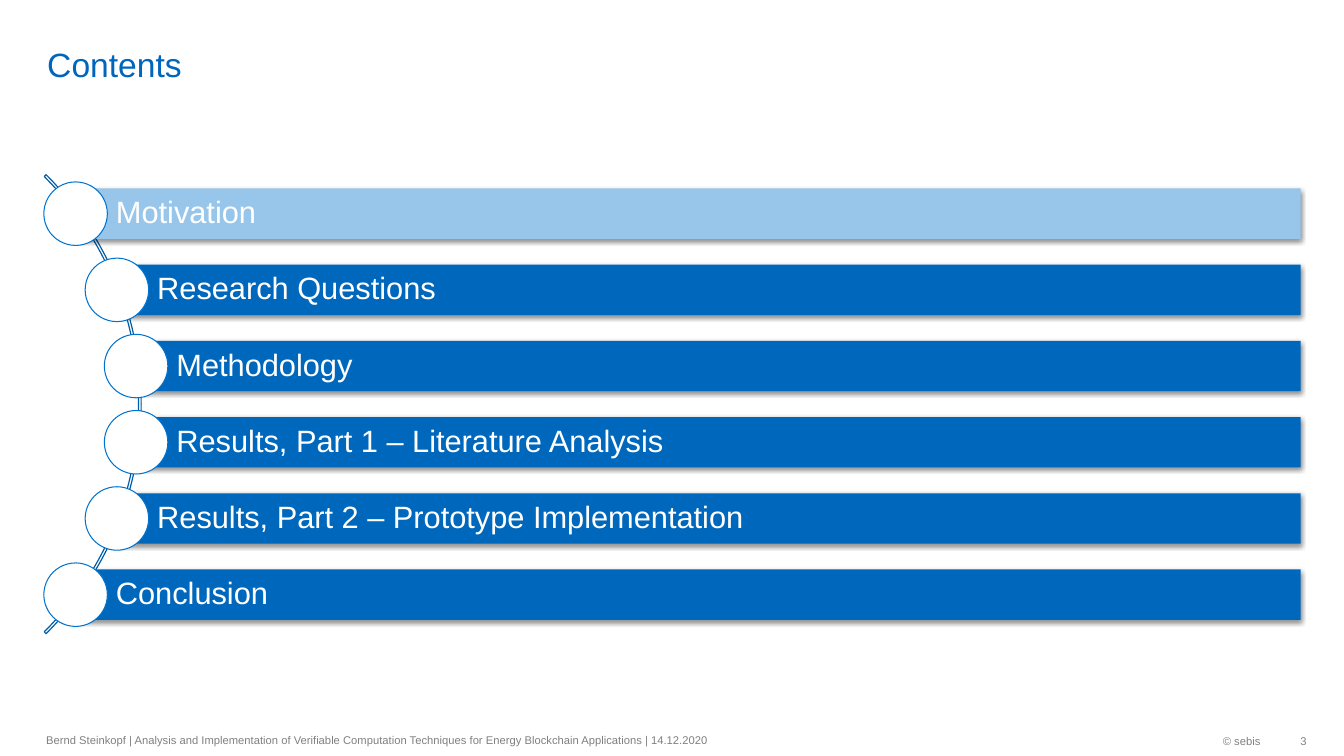
from dataclasses import dataclass

from lxml.etree import SubElement
from pptx import Presentation
from pptx.dml.color import RGBColor
from pptx.enum.shapes import MSO_SHAPE
from pptx.enum.text import MSO_ANCHOR, PP_ALIGN
from pptx.oxml.ns import qn
from pptx.shapes.autoshape import Shape
from pptx.slide import Slide
from pptx.util import Inches, Pt

COLORS = {
    "title": "0065BD",
    "bar": "0068BC",
    "current": "98C6EA",
    "arc": "005CA6",
    "ring": "0073CF",
    "white": "FFFFFF",
    "footer": "808080",
    "shadow": "000000",
}
FONT = "Arial"
BAR_RIGHT, BAR_HEIGHT = 12.9, 0.5
FIRST_TOP, LAST_TOP = 1.87, 5.65
CIRCLE = 0.63


@dataclass
class Chapter:
    name: str
    left: float
    color: str = "bar"


@dataclass
class Label:
    text: str
    left: float
    top: float
    width: float
    height: float
    size: float = 8
    color: str = "footer"
    anchor: MSO_ANCHOR = MSO_ANCHOR.MIDDLE
    align: PP_ALIGN = PP_ALIGN.LEFT
    margins: tuple[float, float, float, float] = (0.1, 0.05, 0.1, 0.05)


CHAPTERS = [
    Chapter("Motivation", 0.75, "current"),
    Chapter("Research Questions", 1.16),
    Chapter("Methodology", 1.35),
    Chapter("Results, Part 1 – Literature Analysis", 1.35),
    Chapter("Results, Part 2 – Prototype Implementation", 1.16),
    Chapter("Conclusion", 0.75),
]

LABELS = [
    Label("Contents", 0.37, 0.05, 11.58, 0.79, 24, "title", MSO_ANCHOR.BOTTOM,
          margins=(0.1, 0, 0.1, 0)),
    Label("Bernd Steinkopf | Analysis and Implementation of Verifiable Computation "
          "Techniques for Energy Blockchain Applications | 14.12.2020",
          0.36, 7.18, 6.97, 0.32),
    Label("© sebis", 10.26, 7.19, 2.34, 0.32, align=PP_ALIGN.RIGHT),
    Label("3", 12.6, 7.19, 0.36, 0.32, align=PP_ALIGN.RIGHT,
          margins=(0.1, 0.05, 0, 0.05)),
]


def color(name: str) -> RGBColor:
    return RGBColor.from_string(COLORS[name])


def write(box: Shape, text: str, size: float, color_name: str, anchor: MSO_ANCHOR,
          align: PP_ALIGN, margins: tuple[float, float, float, float]) -> None:
    frame = box.text_frame
    frame.text = text
    frame.word_wrap = True
    frame.vertical_anchor = anchor
    (frame.margin_left, frame.margin_top,
     frame.margin_right, frame.margin_bottom) = map(Inches, margins)
    para = frame.paragraphs[0]
    para.alignment = align
    span = para.runs[0]
    span.font.name = FONT
    span.font.size = Pt(size)
    span.font.color.rgb = color(color_name)


def add_shadow(shape: Shape) -> None:
    effects = shape.element.spPr.find(qn("a:effectLst"))
    shadow = SubElement(effects, qn("a:outerShdw"), blurRad=str(Pt(3.5)),
                        dist=str(Pt(1.1)), dir="5400000", rotWithShape="0")
    tint = SubElement(shadow, qn("a:srgbClr"), val=COLORS["shadow"])
    SubElement(tint, qn("a:alpha"), val="45000")


def draw_arc(page: Slide) -> None:
    arc = page.shapes.add_shape(MSO_SHAPE.BLOCK_ARC, Inches(-5.04), Inches(0.79),
                                Inches(6.44), Inches(6.44))
    arc.shadow.inherit = False
    for index, value in enumerate((189, 27, 0.004)):
        arc.adjustments[index] = value
    arc.fill.background()
    arc.line.color.rgb = color("arc")
    arc.line.width = Pt(0.85)


def draw_chapter(page: Slide, chapter: Chapter, top: float) -> None:
    bar = page.shapes.add_shape(
        MSO_SHAPE.RECTANGLE, Inches(chapter.left), Inches(top),
        Inches(BAR_RIGHT - chapter.left), Inches(BAR_HEIGHT))
    bar.shadow.inherit = False
    add_shadow(bar)
    bar.fill.solid()
    bar.fill.fore_color.rgb = color(chapter.color)
    bar.line.fill.background()
    write(bar, chapter.name, 22, "white", MSO_ANCHOR.MIDDLE, PP_ALIGN.LEFT,
          (0.4, 0.07, 0.07, 0.07))
    bar.text_frame.paragraphs[0].line_spacing = 0.9

    # The circle is centred on the left edge of its bar
    circle = page.shapes.add_shape(
        MSO_SHAPE.OVAL, Inches(chapter.left - CIRCLE / 2),
        Inches(top + (BAR_HEIGHT - CIRCLE) / 2), Inches(CIRCLE), Inches(CIRCLE))
    circle.shadow.inherit = False
    circle.fill.solid()
    circle.fill.fore_color.rgb = color("white")
    circle.line.color.rgb = color("ring")
    circle.line.width = Pt(0.75)


def draw_label(page: Slide, label: Label) -> None:
    box = page.shapes.add_textbox(Inches(label.left), Inches(label.top),
                                  Inches(label.width), Inches(label.height))
    write(box, label.text, label.size, label.color, label.anchor, label.align,
          label.margins)


def main() -> None:
    deck = Presentation()
    deck.slide_width, deck.slide_height = Inches(13.33), Inches(7.5)
    page = deck.slides.add_slide(deck.slide_layouts[6])

    # Chapter list along the arc
    draw_arc(page)
    pitch = (LAST_TOP - FIRST_TOP) / (len(CHAPTERS) - 1)
    for row, chapter in enumerate(CHAPTERS):
        draw_chapter(page, chapter, FIRST_TOP + row * pitch)

    # Title and footer
    for label in LABELS:
        draw_label(page, label)

    deck.save("out.pptx")


if __name__ == "__main__":
    main()
